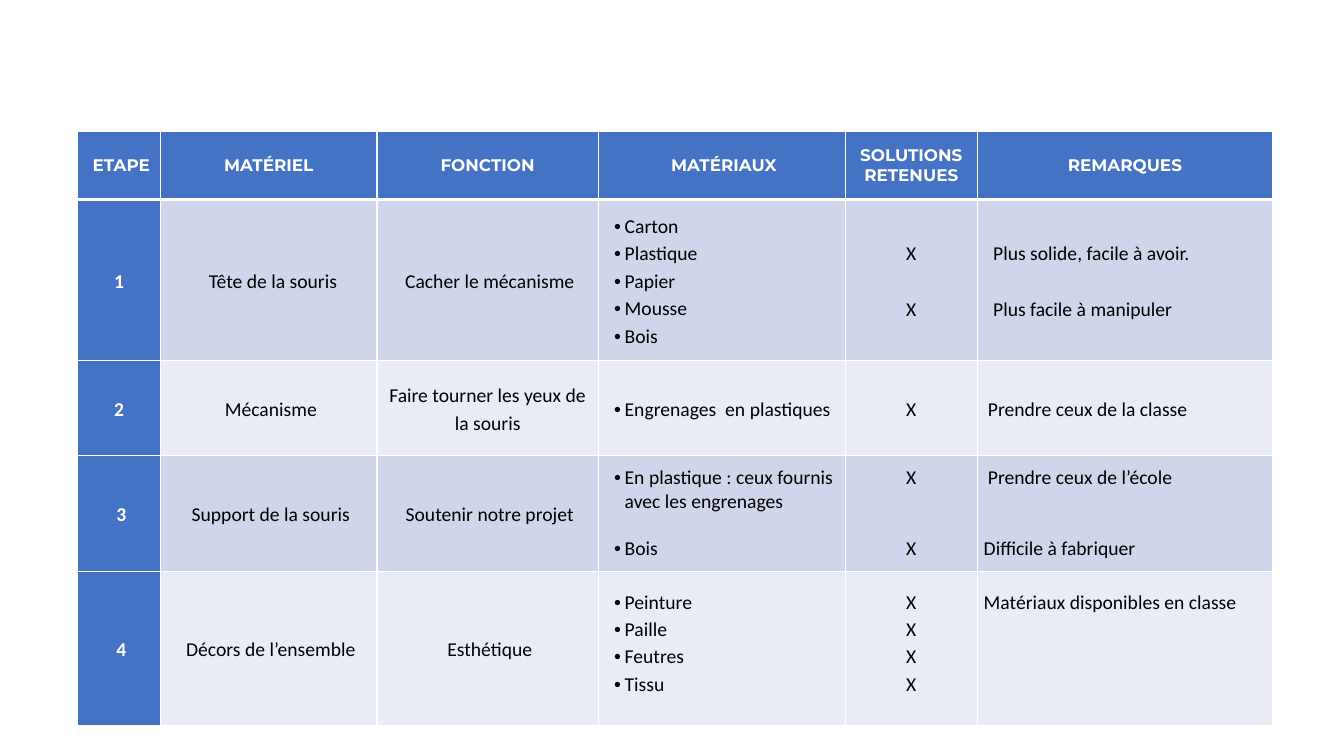
"""Build the slide with the table of project steps and chosen materials."""
from itertools import cycle

from lxml.etree import SubElement
from pptx import Presentation
from pptx.dml.color import RGBColor
from pptx.enum.text import MSO_ANCHOR, PP_ALIGN
from pptx.oxml.ns import qn
from pptx.util import Pt

PX = 9525
THEME = {
    "blue": "4472C4", "dark_band": "CFD5EA", "light_band": "E9EBF5",
    "white": "FFFFFF", "black": "000000",
    "head_font": "Montserrat", "body_font": "Calibri",
    "head_size": 12, "body_size": 14, "line": 1, "head_line": 3,
}


def write(cell, text, size=THEME["body_size"], font=THEME["body_font"],
          color=THEME["black"], bold=False, align=PP_ALIGN.CENTER,
          indents=(0,), bullet=False, spacing=1.15, gap=0,
          anchor=MSO_ANCHOR.MIDDLE, top=0):
    """Write one paragraph per line of text, with gap points between them."""
    cell.vertical_anchor = anchor
    cell.margin_left = cell.margin_right = 6 * PX
    cell.margin_top, cell.margin_bottom = top * PX, 0
    tf = cell.text_frame
    for i, (line, indent) in enumerate(zip(text.split("\n"), cycle(indents))):
        p = tf.add_paragraph() if i else tf.paragraphs[0]
        pPr = p._p.get_or_add_pPr()
        pPr.set("marL", str(indent * PX))
        pPr.set("indent", str(-10 * PX if bullet else 0))
        if bullet:
            SubElement(pPr, qn("a:buFont"), typeface="Arial")
            SubElement(pPr, qn("a:buChar"), char="•")
        p.alignment = align
        p.line_spacing = spacing
        if i and gap:
            p.space_before = Pt(gap)
        r = p.add_run()
        r.text = line
        r.font.size, r.font.name, r.font.bold = Pt(size), font, bold
        r.font.color.rgb = RGBColor.from_string(color)


def paint(cell, fill, top, bottom):
    """Give a cell its white borders and its fill."""
    tcPr = cell._tc.get_or_add_tcPr()
    widths = {"L": THEME["line"], "R": THEME["line"], "T": top, "B": bottom}
    for side, width in widths.items():
        ln = SubElement(tcPr, qn(f"a:ln{side}"), w=str(Pt(width)))
        SubElement(SubElement(ln, qn("a:solidFill")), qn("a:srgbClr"), val=THEME["white"])
    cell.fill.solid()
    cell.fill.fore_color.rgb = RGBColor.from_string(fill)


HEAD = dict(size=THEME["head_size"], font=THEME["head_font"],
            color=THEME["white"], bold=True, spacing=1)
STEP = dict(color=THEME["white"], bold=True)
NUDGE = dict(indents=(4,))
LIST = dict(align=PP_ALIGN.LEFT, indents=(19,), bullet=True)
NOTE = dict(align=PP_ALIGN.LEFT)
UPPER = dict(anchor=MSO_ANCHOR.TOP, top=15)

COLUMNS = [79, 206, 211, 235, 126, 281]
ROWS = [
    (65, [("ETAPE", HEAD | NUDGE), ("MATÉRIEL", HEAD), ("FONCTION", HEAD),
          ("MATÉRIAUX", HEAD | NUDGE), ("SOLUTIONS RETENUES", HEAD),
          ("REMARQUES", HEAD)]),
    (153, [("1", STEP), ("Tête de la souris", dict(indents=(8,))),
           ("Cacher le mécanisme", NUDGE),
           ("Carton\nPlastique\nPapier\nMousse\nBois", LIST),
           ("X\nX", dict(gap=20)),
           ("Plus solide, facile à avoir.\nPlus facile à manipuler",
            NOTE | dict(indents=(9,), gap=20))]),
    (91, [("2", STEP), ("Mécanisme", NUDGE),
          ("Faire tourner les yeux de la souris", {}),
          ("Engrenages  en plastiques", LIST), ("X", {}),
          ("Prendre ceux de la classe", NOTE | NUDGE)]),
    (110, [("3", STEP | NUDGE), ("Support de la souris", NUDGE),
           ("Soutenir notre projet", NUDGE),
           ("En plastique : ceux fournis avec les engrenages\nBois",
            LIST | dict(spacing=1, gap=17)),
           ("X\nX", dict(spacing=1, gap=34)),
           ("Prendre ceux de l’école\nDifficile à fabriquer",
            NOTE | dict(indents=(4, 0), spacing=1, gap=34))]),
    (147, [("4", STEP | NUDGE), ("Décors de l’ensemble", NUDGE),
           ("Esthétique", NUDGE),
           ("Peinture\nPaille\nFeutres\nTissu", LIST | UPPER),
           ("X\nX\nX\nX", UPPER),
           ("Matériaux disponibles en classe", NOTE | UPPER)]),
]

prs = Presentation()
prs.slide_width, prs.slide_height = 1280 * PX, 720 * PX
s = prs.slides.add_slide(prs.slide_layouts[6])

height = sum(h for h, _ in ROWS)
table = s.shapes.add_table(len(ROWS), len(COLUMNS), 74 * PX, 125 * PX,
                           sum(COLUMNS) * PX, height * PX).table
for column, width in zip(table.columns, COLUMNS):
    column.width = width * PX
for i, (h, cells) in enumerate(ROWS):
    table.rows[i].height = h * PX
    band = THEME["dark_band"] if i % 2 else THEME["light_band"]
    top = THEME["head_line"] if i == 1 else THEME["line"]
    bottom = THEME["head_line"] if i == 0 else THEME["line"]
    for j, (text, style) in enumerate(cells):
        cell = table.cell(i, j)
        write(cell, text, **style)
        paint(cell, THEME["blue"] if i == 0 or j == 0 else band, top, bottom)

prs.save("out.pptx")
